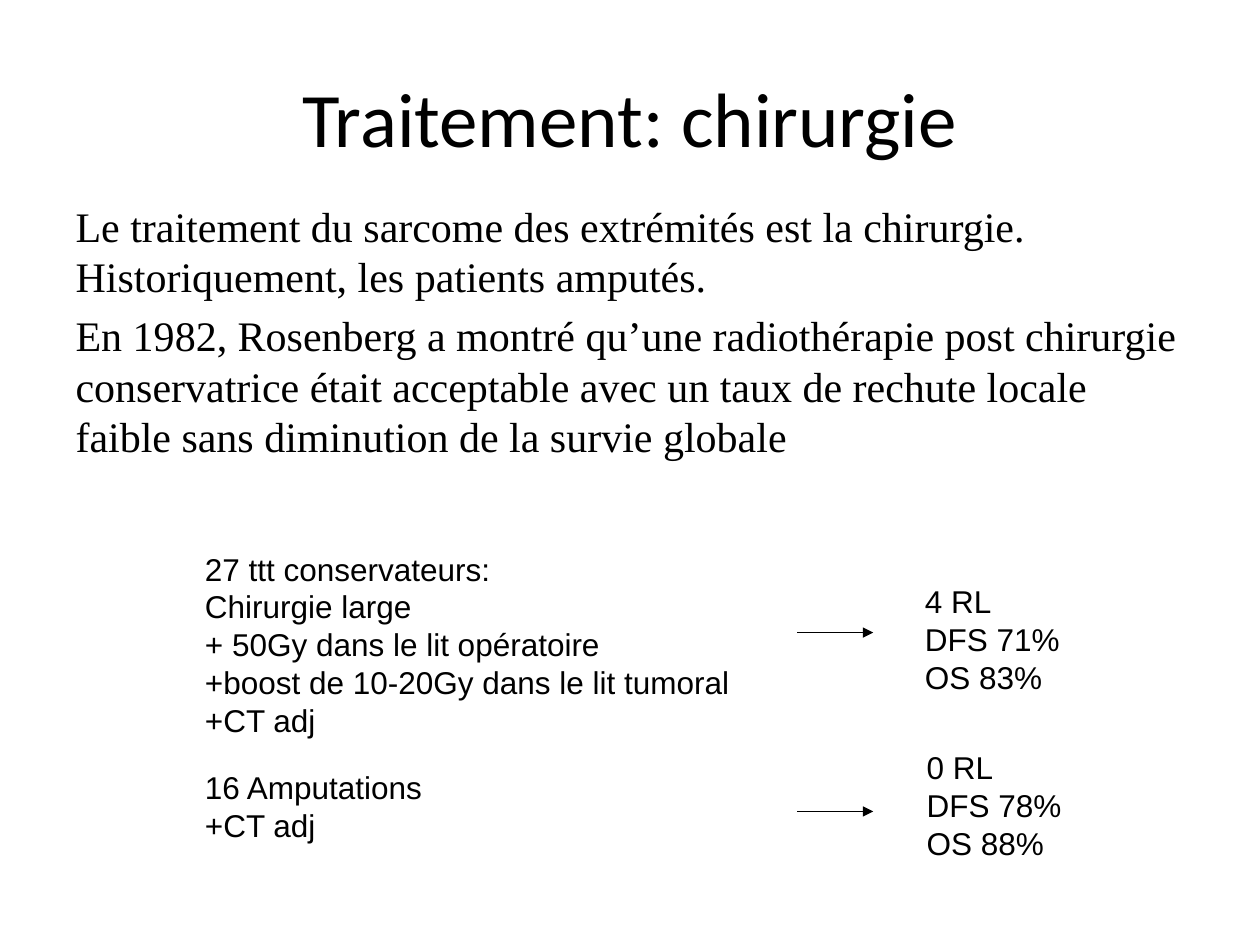
from dataclasses import dataclass

from lxml.etree import SubElement
from pptx import Presentation
from pptx.dml.color import RGBColor
from pptx.enum.shapes import MSO_CONNECTOR
from pptx.enum.text import MSO_ANCHOR, MSO_AUTO_SIZE, PP_ALIGN
from pptx.oxml.ns import qn
from pptx.util import Pt


@dataclass(frozen=True)
class Theme:
    ink: RGBColor = RGBColor(0, 0, 0)
    title: tuple = ("Calibri", 44)
    body: tuple = ("Times New Roman", 24)
    note: tuple = ("Arial", 18)
    line: float = 0.75


class Page:
    """The current slide and its style."""

    def __init__(self, deck, theme):
        self.theme = theme
        self.slide = deck.slides.add_slide(deck.slide_layouts[1])

    def fill(self, frame, lines, style, align=PP_ALIGN.LEFT):
        font, size = style
        for i, line in enumerate(lines):
            para = frame.paragraphs[0] if i == 0 else frame.add_paragraph()
            para.alignment = align
            run = para.add_run()
            run.text = line
            run.font.name = font
            run.font.size = Pt(size)
            run.font.color.rgb = self.theme.ink

    def place(self, shape, left, top, width, height):
        shape.left, shape.top = Pt(left), Pt(top)
        shape.width, shape.height = Pt(width), Pt(height)

    def title(self, text, box):
        shape = self.slide.shapes.title
        self.place(shape, *box)
        shape.text_frame.vertical_anchor = MSO_ANCHOR.MIDDLE
        self.fill(shape.text_frame, [text], self.theme.title, PP_ALIGN.CENTER)

    def body(self, lines, box):
        shape = self.slide.placeholders[1]
        self.place(shape, *box)
        frame = shape.text_frame
        frame.auto_size = MSO_AUTO_SIZE.NONE
        self.fill(frame, lines, self.theme.body)
        for para in frame.paragraphs:
            para.space_before = Pt(self.theme.body[1] * 0.2)
            props = para._p.get_or_add_pPr()
            props.set("marL", "0")
            props.set("indent", "0")
            SubElement(props, qn("a:buNone"))

    def note(self, lines, box):
        shape = self.slide.shapes.add_textbox(*map(Pt, box))
        frame = shape.text_frame
        frame.word_wrap = False
        frame.auto_size = MSO_AUTO_SIZE.SHAPE_TO_FIT_TEXT
        self.fill(frame, lines, self.theme.note)

    def arrow(self, left, right, y):
        link = self.slide.shapes.add_connector(
            MSO_CONNECTOR.STRAIGHT, Pt(left), Pt(y), Pt(right), Pt(y))
        link.line.color.rgb = self.theme.ink
        link.line.width = Pt(self.theme.line)
        props = link._element.spPr
        SubElement(props.find(qn("a:ln")), qn("a:tailEnd"), type="triangle")
        SubElement(props, qn("a:effectLst"))


def main():
    deck = Presentation()
    deck.slide_width, deck.slide_height = Pt(720), Pt(540)
    page = Page(deck, Theme())

    # Title and history
    page.title("Traitement: chirurgie", (36, 21.6, 648, 90))
    page.body([
        "Le traitement du sarcome des extrémités est la chirurgie. "
        "Historiquement, les patients amputés.",
        "En 1982, Rosenberg a montré qu’une radiothérapie post chirurgie "
        "conservatrice était acceptable avec un taux de rechute locale "
        "faible sans diminution de la survie globale",
    ], (36, 111, 648, 298))

    # Trial arms: treatment, arrow, outcome
    arms = [
        (["27 ttt conservateurs:", "Chirurgie large",
          "+ 50Gy dans le lit opératoire",
          "+boost de 10-20Gy dans le lit tumoral", "+CT adj"],
         (110, 310.5, 317, 116.5), 361.5,
         ["4 RL", "DFS 71%", "OS 83%"], (521.5, 329, 92, 73)),
        (["16 Amputations", "+CT adj"],
         (110, 435.5, 140, 51), 463.7,
         ["0 RL", "DFS 78%", "OS 88%"], (522.5, 424, 92, 73)),
    ]
    for care, left, y, result, right in arms:
        page.note(care, left)
        page.arrow(455.5, 499, y)
        page.note(result, right)

    deck.save("out.pptx")


if __name__ == "__main__":
    main()
